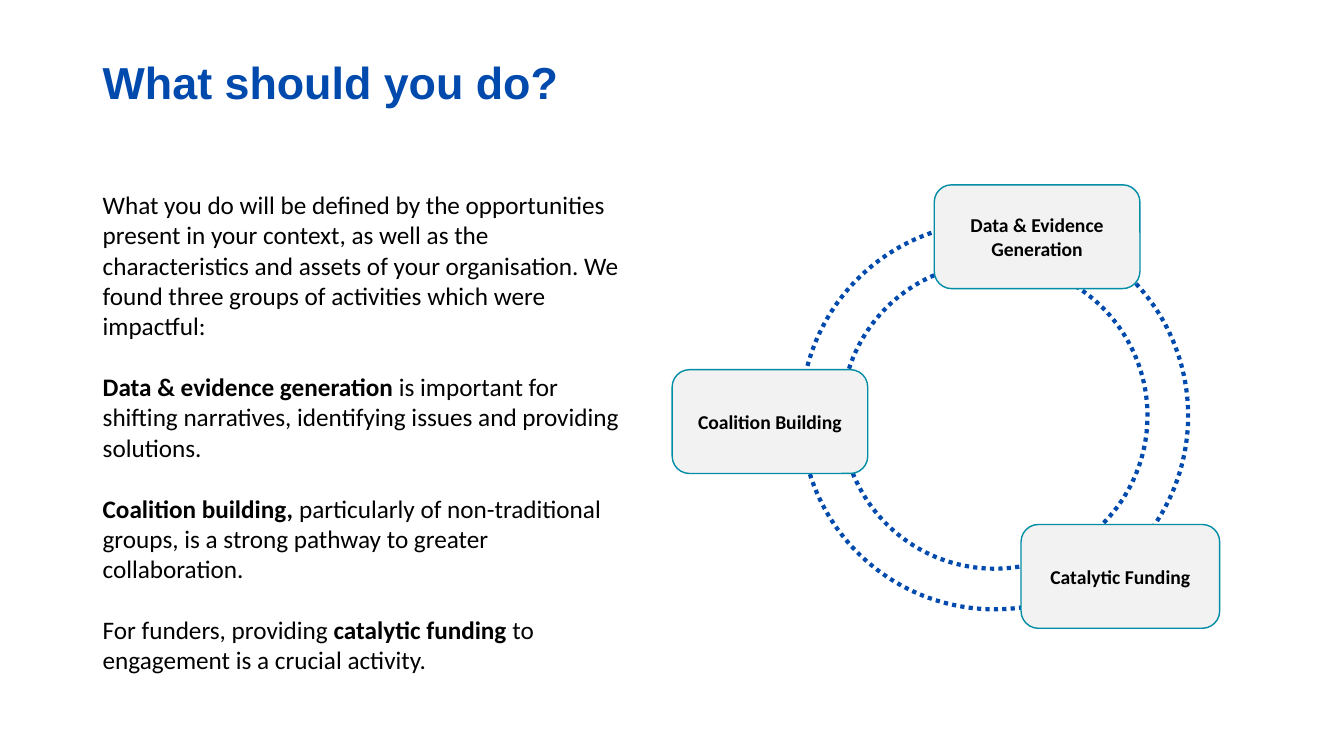
from dataclasses import dataclass

from pptx import Presentation
from pptx.dml.color import RGBColor
from pptx.enum.dml import MSO_LINE
from pptx.enum.shapes import MSO_SHAPE
from pptx.enum.text import MSO_ANCHOR, PP_ALIGN
from pptx.util import Inches, Pt

TITLE = "What should you do?"

# Each paragraph is a list of (text, bold) runs.
BODY = [
    [("What you do will be defined by the opportunities present in your context, "
      "as well as the characteristics and assets of your organisation. "
      "We found three groups of activities which were impactful:", False)],
    [("Data & evidence generation ", True),
     ("is important for shifting narratives, identifying issues and providing solutions.", False)],
    [("Coalition building, ", True),
     ("particularly of non-traditional groups, is a strong pathway to greater collaboration.", False)],
    [("For funders, providing ", False), ("catalytic funding ", True),
     ("to engagement is a crucial activity.", False)],
]

# Label, centre offset from the ring's centre in ring radii, width in inches.
ACTIVITIES = [
    ("Data & Evidence Generation", (0.22, -0.925), 2.04),
    ("Coalition Building", (-1.16, 0.03), 1.94),
    ("Catalytic Funding", (0.65, 0.83), 1.97),
]

SLIDE_WIDTH, SLIDE_HEIGHT = 13.33, 7.5
MARGIN = 0.92
RING_CENTRE = (0.74 * SLIDE_WIDTH, 0.55 * SLIDE_HEIGHT)
RING_RADIUS = 1.92
RING_THICKNESS = 0.105
BOX_HEIGHT = 1.03


@dataclass(frozen=True)
class Theme:
    title_font: str = "Arial"
    body_font: str = "Calibri"
    title_size: int = 32
    body_size: int = 18
    label_size: int = 14
    paragraph_gap: int = 22
    blue: RGBColor = RGBColor(0x00, 0x4A, 0xAD)
    teal: RGBColor = RGBColor(0x00, 0x8D, 0xA5)
    grey: RGBColor = RGBColor(0xF2, 0xF2, 0xF2)
    white: RGBColor = RGBColor(0xFF, 0xFF, 0xFF)
    black: RGBColor = RGBColor(0x00, 0x00, 0x00)


THEME = Theme()


def add_run(paragraph, text, size, bold, font_name=THEME.body_font, color=THEME.black):
    run = paragraph.add_run()
    run.text = text
    run.font.name = font_name
    run.font.size = Pt(size)
    run.font.bold = bold
    run.font.color.rgb = color


def add_text_box(slide, left, top, width, height):
    frame = slide.shapes.add_textbox(*map(Inches, (left, top, width, height))).text_frame
    frame.word_wrap = True
    return frame


def add_centred_shape(group, kind, centre, width, height, fill, line, line_width):
    left, top = centre[0] - width / 2, centre[1] - height / 2
    shape = group.shapes.add_shape(kind, *map(Inches, (left, top, width, height)))
    shape.shadow.inherit = False
    shape.fill.solid()
    shape.fill.fore_color.rgb = fill
    shape.line.color.rgb = line
    shape.line.width = Pt(line_width)
    return shape


def add_title(slide):
    frame = add_text_box(slide, MARGIN, 0.4, 6.79, 0.89)
    frame.vertical_anchor = MSO_ANCHOR.MIDDLE
    paragraph = frame.paragraphs[0]
    paragraph.line_spacing = 0.9
    add_run(paragraph, TITLE, THEME.title_size, True, THEME.title_font, THEME.blue)


def add_body(slide):
    frame = add_text_box(slide, MARGIN, 1.83, 5.43, 4.95)
    for index, runs in enumerate(BODY):
        paragraph = frame.add_paragraph() if index else frame.paragraphs[0]
        if index:
            paragraph.space_before = Pt(THEME.paragraph_gap)
        for text, bold in runs:
            add_run(paragraph, text, THEME.body_size, bold)


def add_activity_ring(slide):
    group = slide.shapes.add_group_shape()
    ring = add_centred_shape(group, MSO_SHAPE.DONUT, RING_CENTRE, 2 * RING_RADIUS,
                             2 * RING_RADIUS, THEME.white, THEME.blue, 3)
    ring.adjustments[0] = RING_THICKNESS
    ring.line.dash_style = MSO_LINE.ROUND_DOT
    for label, offset, width in ACTIVITIES:
        centre = [middle + share * RING_RADIUS for middle, share in zip(RING_CENTRE, offset)]
        box = add_centred_shape(group, MSO_SHAPE.ROUNDED_RECTANGLE, centre, width,
                                BOX_HEIGHT, THEME.grey, THEME.teal, 1)
        frame = box.text_frame
        frame.word_wrap = True
        frame.vertical_anchor = MSO_ANCHOR.MIDDLE
        paragraph = frame.paragraphs[0]
        paragraph.alignment = PP_ALIGN.CENTER
        add_run(paragraph, label, THEME.label_size, True)


def main():
    presentation = Presentation()
    presentation.slide_width = Inches(SLIDE_WIDTH)
    presentation.slide_height = Inches(SLIDE_HEIGHT)
    slide = presentation.slides.add_slide(presentation.slide_layouts[6])
    add_title(slide)
    add_activity_ring(slide)
    add_body(slide)
    presentation.save("out.pptx")


if __name__ == "__main__":
    main()
